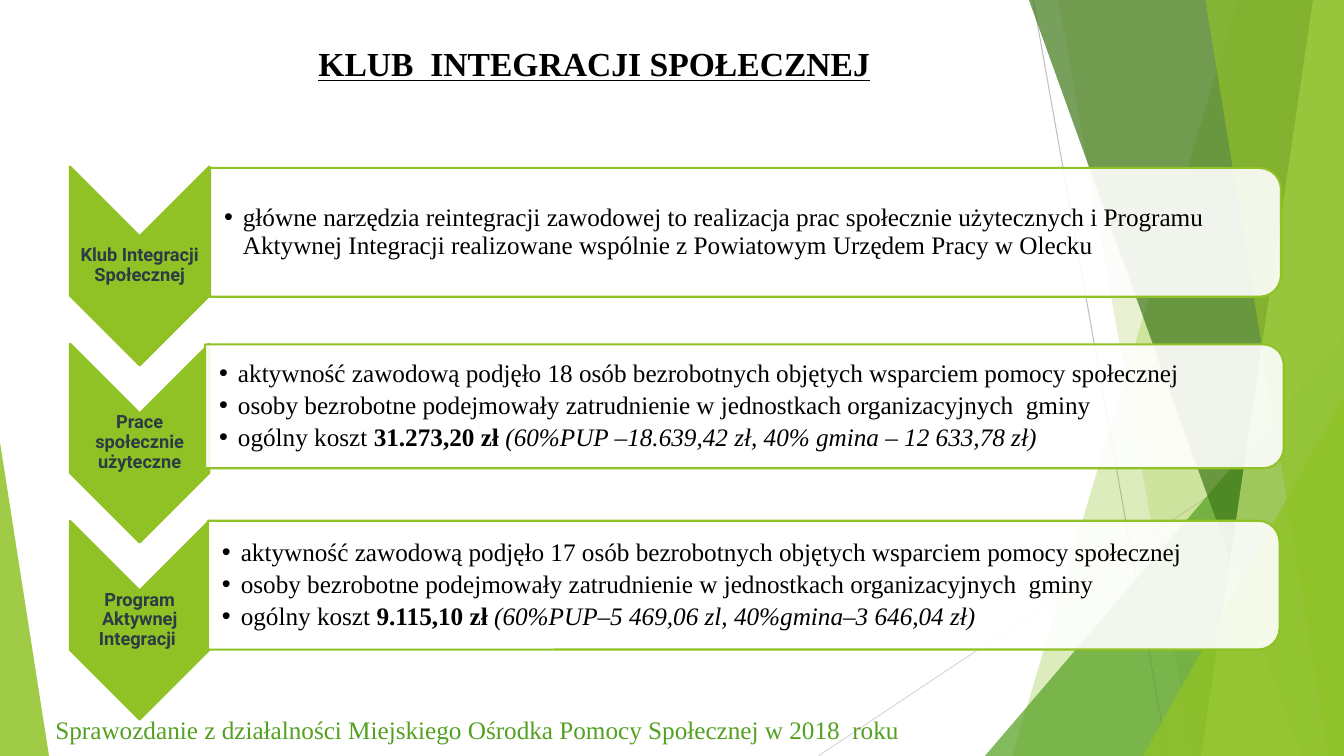
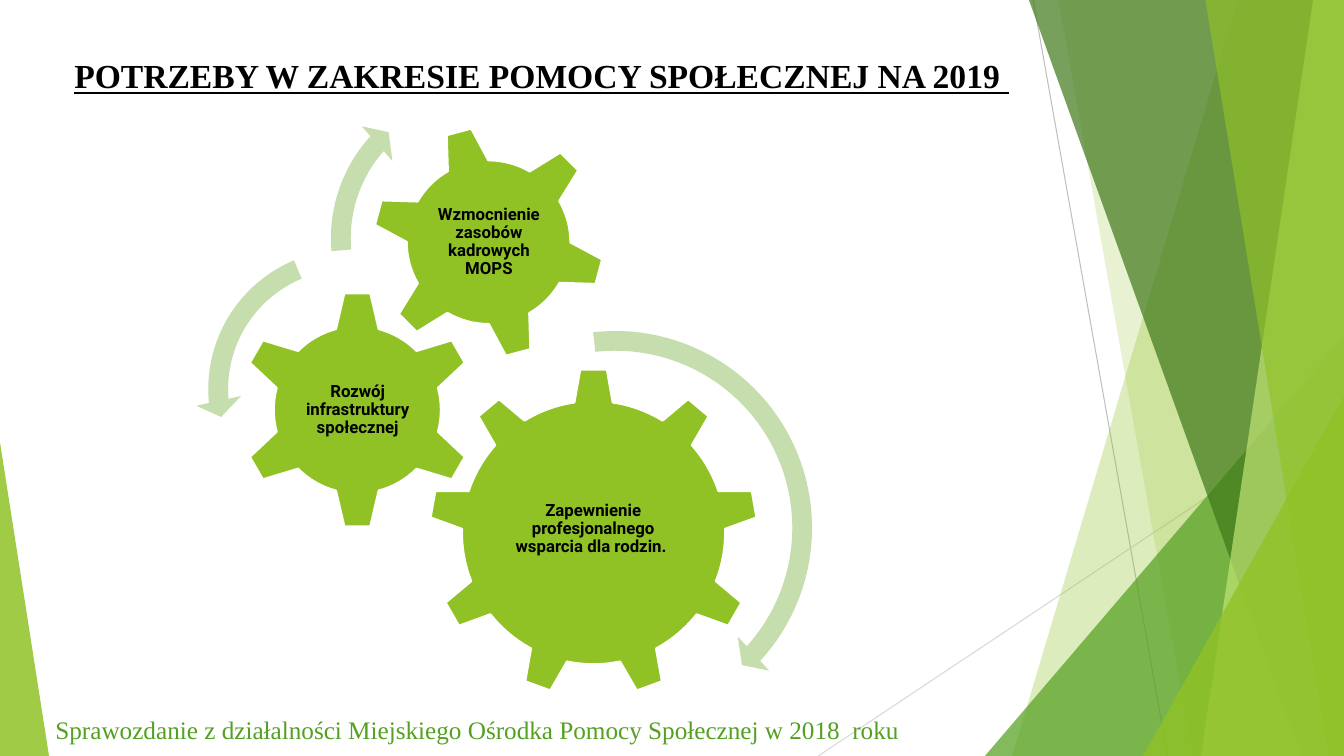
from lxml.etree import SubElement
from pptx import Presentation
from pptx.dml.color import RGBColor
from pptx.enum.shapes import MSO_CONNECTOR, MSO_SHAPE
from pptx.enum.text import MSO_ANCHOR, PP_ALIGN
from pptx.oxml.ns import qn
from pptx.util import Pt

W, H = 960, 540
LIME = RGBColor(0x90, 0xC2, 0x26)
GREEN = RGBColor(0x54, 0xA0, 0x21)
FOREST = RGBColor(0x3F, 0x78, 0x19)
PALE_LIME = RGBColor(0xC0, 0xE4, 0x74)
SAGE = RGBColor(0xC6, 0xDD, 0xAD)
SLATE = RGBColor(0x2C, 0x3C, 0x43)
GRAY = RGBColor(0xBF, 0xBF, 0xBF)
LIGHT_GRAY = RGBColor(0xD9, 0xD9, 0xD9)
BLACK = RGBColor(0, 0, 0)
WHITE = RGBColor(255, 255, 255)
SERIF, SANS = "Times New Roman", "Roboto"

FOOTER = "Sprawozdanie z działalności Miejskiego Ośrodka Pomocy Społecznej w 2018  roku"
EMPLOYMENT = "osoby bezrobotne podejmowały zatrudnienie w jednostkach organizacyjnych  gminy"

# label, panel (left, top, width, height), bullets
CLUB_ROWS = [
    ("Klub Integracji Społecznej", (150, 120, 765, 92), [
        "główne narzędzia reintegracji zawodowej to realizacja prac społecznie użytecznych "
        "i Programu Aktywnej Integracji realizowane wspólnie z Powiatowym Urzędem Pracy w Olecku",
    ]),
    ("Prace społecznie użyteczne", (146.5, 246, 770.5, 88.5), [
        "aktywność zawodową podjęło 18 osób bezrobotnych objętych wsparciem pomocy społecznej",
        EMPLOYMENT,
        [("ogólny koszt ", ""), ("31.273,20 zł ", "b"),
         ("(60%PUP –18.639,42 zł, 40% gmina – 12 633,78 zł)", "i")],
    ]),
    ("Program Aktywnej Integracji ", (148.5, 372, 765.5, 92), [
        "aktywność zawodową podjęło 17 osób bezrobotnych objętych wsparciem pomocy społecznej",
        EMPLOYMENT,
        [("ogólny koszt ", ""), ("9.115,10 zł ", "b"),
         ("(60%PUP–5 469,06 zl, 40%gmina–3 646,04 zł)", "i")],
    ]),
]

# preset, box, rotation, text, text box
GEARS = [
    (MSO_SHAPE.GEAR_9, (306.5, 263, 235, 235), 0,
     "Zapewnienie profesjonalnego wsparcia dla rodzin. ", (353.5, 317.5, 140.5, 121)),
    (MSO_SHAPE.GEAR_6, (170, 207.5, 170.5, 170.5), 0,
     "Rozwój infrastruktury społecznej", (213, 250.5, 85, 84.5)),
    (MSO_SHAPE.GEAR_6, (265.5, 89.5, 167, 167), 345,
     "Wzmocnienie zasobów kadrowych MOPS", (302.5, 126, 93.5, 93.5)),
]
ARROWS = [
    (MSO_SHAPE.CIRCULAR_ARROW, (289.5, 227, 300, 300), (0.047, 2.99, 25.393, 158.123, 0.055)),
    (MSO_SHAPE.LEFT_CIRCULAR_ARROW, (139.5, 169, 218, 218), (0.065, 4.3, 104.891, 148.378, 0.075)),
    (MSO_SHAPE.CIRCULAR_ARROW, (227, 52.5, 235.5, 235.5), (0.06, 3.941, 133.138, 105.082, 0.07)),
]


def paint(sp, fill, alpha=100, line=None):
    """Give a shape a flat fill of the given opacity and an optional outline."""
    sp.shadow.inherit = False
    sp.fill.solid()
    sp.fill.fore_color.rgb = fill
    if alpha < 100:
        clr = sp._element.spPr.find(qn("a:solidFill")).find(qn("a:srgbClr"))
        SubElement(clr, qn("a:alpha"), val=str(alpha * 1000))
    if line is None:
        sp.line.fill.background()
    else:
        sp.line.color.rgb = line
        sp.line.width = Pt(1.5)


def add_preset(s, kind, box, fill, alpha=100, line=None, adj=(), rotation=0):
    sp = s.shapes.add_shape(kind, *map(Pt, box))
    for i, value in enumerate(adj):
        sp.adjustments[i] = value
    sp.rotation = rotation
    paint(sp, fill, alpha, line)


def add_turned(s, kind, box, fill, **look):
    """Add a shape turned by 90 degrees that fills the box as seen."""
    x, y, w, h = box
    frame = (x + (w - h) / 2, y + (h - w) / 2, h, w)
    add_preset(s, kind, frame, fill, rotation=90, **look)


def add_band(s, top, bottom, right_top, fill, alpha):
    """Add a slanted band that runs to the right edge of the slide."""
    corners = [(Pt(x), Pt(y)) for x, y in ((right_top, 0), (W, 0), (W, H), (bottom, H))]
    builder = s.shapes.build_freeform(*corners[0])
    builder.add_line_segments(corners[1:], close=True)
    paint(builder.convert_to_shape(0, top), fill, alpha)


def add_line(s, ends, color):
    line = s.shapes.add_connector(MSO_CONNECTOR.STRAIGHT, *map(Pt, ends))
    line.line.color.rgb = color
    line.line.width = Pt(0.75)
    SubElement(line._element.spPr, qn("a:effectLst"))


def set_bullet(p, indent):
    pPr = p._p.get_or_add_pPr()
    pPr.set("marL", str(Pt(indent)))
    pPr.set("indent", str(-Pt(indent)))
    SubElement(pPr, qn("a:buFont"), typeface="Arial")
    SubElement(pPr, qn("a:buChar"), char="•")


def add_text(s, box, paragraphs, size=18, font=SERIF, color=BLACK, bold=False,
             underline=False, align=PP_ALIGN.LEFT, anchor=MSO_ANCHOR.TOP,
             margins=(7.2, 3.6, 7.2, 3.6), spacing=1.0, before=0, after=0, bullets=False):
    """Add a text box; a paragraph is a string or a list of (text, "b" or "i" or "")."""
    tf = s.shapes.add_textbox(*map(Pt, box)).text_frame
    tf.word_wrap = True
    tf.vertical_anchor = anchor
    tf.margin_left, tf.margin_top, tf.margin_right, tf.margin_bottom = map(Pt, margins)
    for i, runs in enumerate(paragraphs):
        p = tf.add_paragraph() if i else tf.paragraphs[0]
        p.alignment = align
        p.line_spacing = spacing
        p.space_before, p.space_after = Pt(before), Pt(after)
        if bullets:
            set_bullet(p, 13.5)
        for text, style in [(runs, "")] if isinstance(runs, str) else runs:
            r = p.add_run()
            r.text = text
            r.font.name, r.font.size = font, Pt(size)
            r.font.color.rgb = color
            r.font.bold = bold or style == "b"
            r.font.italic = style == "i"
            r.font.underline = underline


def add_label(s, box, text, size, color, margin):
    add_text(s, box, [text], size=size, font=SANS, color=color, bold=True, spacing=0.9,
             align=PP_ALIGN.CENTER, anchor=MSO_ANCHOR.MIDDLE, margins=(margin,) * 4)


def add_title(s, box, text, **layout):
    add_text(s, box, [text], size=24, bold=True, underline=True, **layout)


def add_backdrop(s):
    triangle = MSO_SHAPE.ISOSCELES_TRIANGLE
    add_line(s, (738, 0, 834, H), GRAY)
    add_line(s, (W, 290, 584.5, H), LIGHT_GRAY)
    add_band(s, 0, 723, 884, LIME, 30)
    add_band(s, 0, 852, 756, LIME, 20)
    add_preset(s, triangle, (703.5, 240, 256.5, 300), GREEN, 72, adj=[1])
    add_band(s, 0, 929.5, 735, FOREST, 70)
    add_band(s, 0, 858, 938, PALE_LIME, 70)
    add_band(s, 0, 949, 861, LIME, 65)
    add_preset(s, triangle, (816.5, 283, 143.5, 257), LIME, 80, adj=[1])
    add_preset(s, triangle, (0, 316, 35, 224), LIME, 85, adj=[0])


def new_slide(prs):
    s = prs.slides.add_slide(prs.slide_layouts[6])
    add_backdrop(s)
    add_text(s, (32.5, 507, 667, 33), [FOOTER], color=GREEN)
    return s


def add_club_row(s, index, label, panel, bullets):
    top = 119 + 126.5 * index
    add_turned(s, MSO_SHAPE.CHEVRON, (50, top, 99.5, 142), LIME, line=LIME)
    add_label(s, (50, top + 49.5, 99.5, 42.5), label, 13, SLATE, 0.7)
    add_turned(s, MSO_SHAPE.ROUND_2_SAME_RECTANGLE, panel, WHITE, alpha=90, line=LIME)
    x, y, w, h = panel
    add_text(s, (x, y + 4.5, w - 5, h - 9), bullets, anchor=MSO_ANCHOR.MIDDLE,
             margins=(10, 0.7, 0.7, 0.7), spacing=0.9, after=3.5, bullets=True)


def build_club(prs):
    s = new_slide(prs)
    add_title(s, (36.5, 23, 776, 41), "KLUB  INTEGRACJI SPOŁECZNEJ",
              align=PP_ALIGN.CENTER, spacing=1.15, before=12)
    for i, row in enumerate(CLUB_ROWS):
        add_club_row(s, i, *row)


def build_needs(prs):
    s = new_slide(prs)
    add_title(s, (46, 36, 688, 36), "POTRZEBY W ZAKRESIE POMOCY SPOŁECZNEJ NA 2019 ")
    for kind, box, rotation, text, text_box in GEARS:
        add_preset(s, kind, box, LIME, line=WHITE, rotation=rotation)
        add_label(s, text_box, text, 12, BLACK, 1.2)
    for kind, box, adj in ARROWS:
        add_preset(s, kind, box, SAGE, adj=adj)


def main():
    prs = Presentation()
    prs.slide_width, prs.slide_height = Pt(W), Pt(H)
    build_club(prs)
    build_needs(prs)
    prs.save("out.pptx")


if __name__ == "__main__":
    main()
